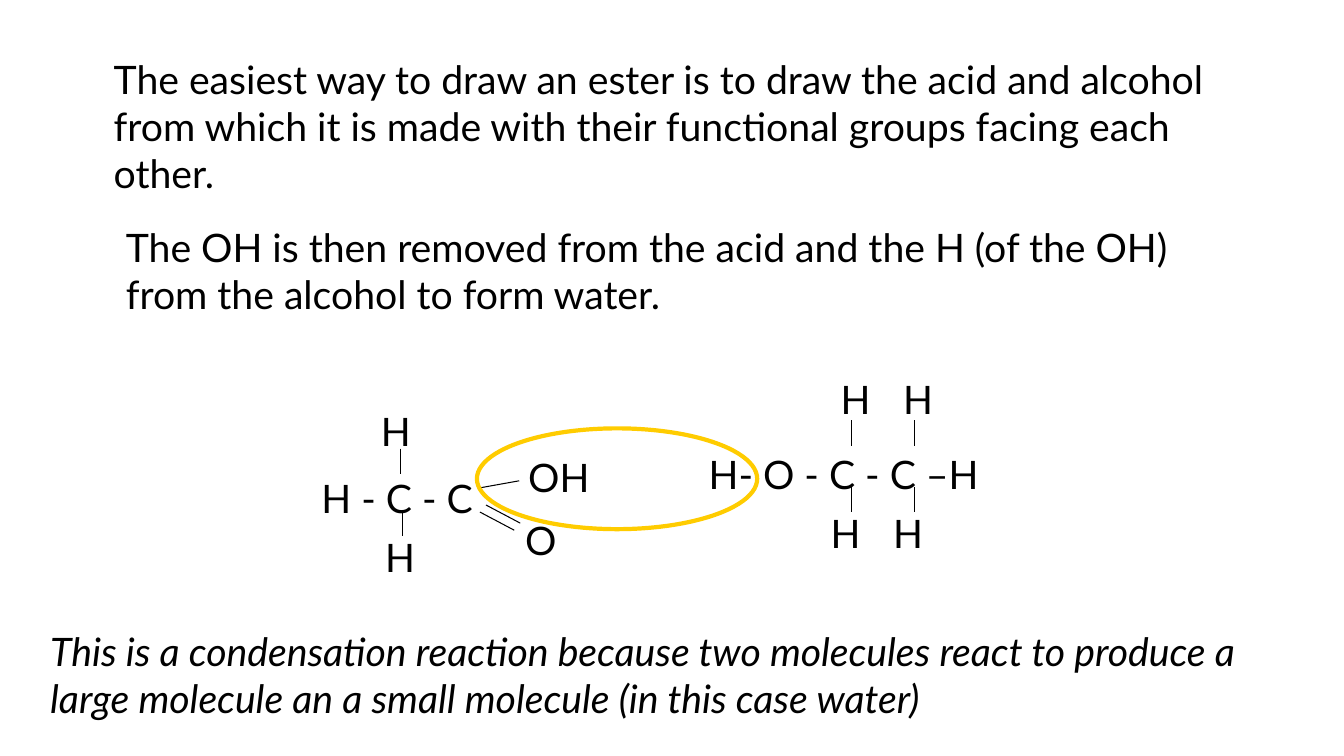
from dataclasses import dataclass

from lxml.etree import SubElement
from pptx import Presentation
from pptx.dml.color import RGBColor
from pptx.enum.shapes import MSO_CONNECTOR, MSO_SHAPE
from pptx.enum.text import MSO_ANCHOR, MSO_AUTO_SIZE, PP_ALIGN
from pptx.oxml.ns import qn
from pptx.shapes.shapetree import GroupShapes, SlideShapes
from pptx.util import Emu, Pt

SCALE = 9144
FONT = "Lato"
COLORS = {"ink": "000000", "paper": "FFFFFF", "ring": "FFCC00"}
Tree = SlideShapes | GroupShapes


@dataclass(frozen=True)
class Label:
    """A piece of text and its box in px."""
    text: str
    left: int
    top: int
    width: int = 62
    height: int = 57


@dataclass(frozen=True)
class Bond:
    """A line from one point to another in px."""
    x: int
    y: int
    to_x: int
    to_y: int


@dataclass(frozen=True)
class Group:
    """The atoms and bonds of one molecule."""
    atoms: list[Label]
    bonds: list[Bond]


def px(size: int) -> Emu:
    """Turn px into EMU."""
    return Emu(size * SCALE)


def color(name: str) -> RGBColor:
    """Look up a colour by name."""
    return RGBColor.from_string(COLORS[name])


def write(tree: Tree, label: Label, *, size: int = 28, italic: bool = False,
          edge: str | None = None) -> None:
    """Add a text box with its format."""
    box = tree.add_textbox(px(label.left), px(label.top), px(label.width), px(label.height))
    if edge:
        box.line.color.rgb = color(edge)
        box.line.width = Pt(0.75)
    frame = box.text_frame
    frame.word_wrap = True
    frame.auto_size = MSO_AUTO_SIZE.SHAPE_TO_FIT_TEXT
    frame.vertical_anchor = MSO_ANCHOR.TOP
    para = frame.paragraphs[0]
    para.alignment = PP_ALIGN.LEFT
    run = para.add_run()
    run.text = label.text
    run.font.name = FONT
    run.font.size = Pt(size)
    run.font.italic = italic
    run.font.color.rgb = color("ink")


def link(tree: Tree, bond: Bond) -> None:
    """Add a thin bond line."""
    line = tree.add_connector(MSO_CONNECTOR.STRAIGHT, px(bond.x), px(bond.y),
                              px(bond.to_x), px(bond.to_y))
    line.line.color.rgb = color("ink")
    line.line.width = Pt(0.75)
    SubElement(line._element.spPr, qn("a:effectLst"))


def draw(tree: Tree, group: Group) -> None:
    """Add a molecule as one group."""
    parts = tree.add_group_shape().shapes
    for atom in group.atoms:
        write(parts, atom, edge="paper")
    for bond in group.bonds:
        link(parts, bond)


def circle(tree: Tree, left: int, top: int, width: int, height: int) -> None:
    """Add the ring around the atoms that form water."""
    ring = tree.add_shape(MSO_SHAPE.OVAL, px(left), px(top), px(width), px(height))
    ring.shadow.inherit = False
    ring.fill.background()
    ring.line.color.rgb = color("ring")
    ring.line.width = Pt(3)


def stem(x: int, y: int) -> Bond:
    """Make an upright bond."""
    return Bond(x, y, x, y + 25)


ACID = Group(
    [Label("H - C - C", 309, 466, 250), Label("H", 368, 399), Label("H", 372, 524),
     Label("OH", 514, 445, 118), Label("O", 511, 507)],
    [stem(399, 507), stem(397, 445), Bond(515, 477, 476, 484),
     *(Bond(x, y, x + 34, y + 18) for x, y in ((482, 501), (476, 508)))],
)
ALCOHOL = Group(
    [Label("H- O - C - C –H", 693, 442, 395),
     *(Label("H", left + step, top) for left, top in ((824, 367), (814, 500))
       for step in (0, 62))],
    [stem(x, y) for y in (417, 483) for x in (845, 907)],
)
INTRO = [
    Label("The easiest way to draw an ester is to draw the acid and alcohol from which "
          "it is made with their functional groups facing each other.", 103, 50, 1103, 151),
    Label("The OH is then removed from the acid and the H (of the OH) from the alcohol "
          "to form water.", 115, 217, 1072, 104),
]
CLOSE = Label("This is a condensation reaction because two molecules react to produce a "
              "large molecule an a small molecule (in this case water)", 40, 617, 1247, 104)


def main() -> None:
    """Build and save the slide."""
    deck = Presentation()
    deck.slide_width, deck.slide_height = px(1333), px(750)
    tree = deck.slides.add_slide(deck.slide_layouts[6]).shapes
    for group in (ACID, ALCOHOL):
        draw(tree, group)
    for label in INTRO:
        write(tree, label)
    circle(tree, 473, 425, 278, 100)
    write(tree, CLOSE, italic=True)
    deck.save("out.pptx")


if __name__ == "__main__":
    main()
